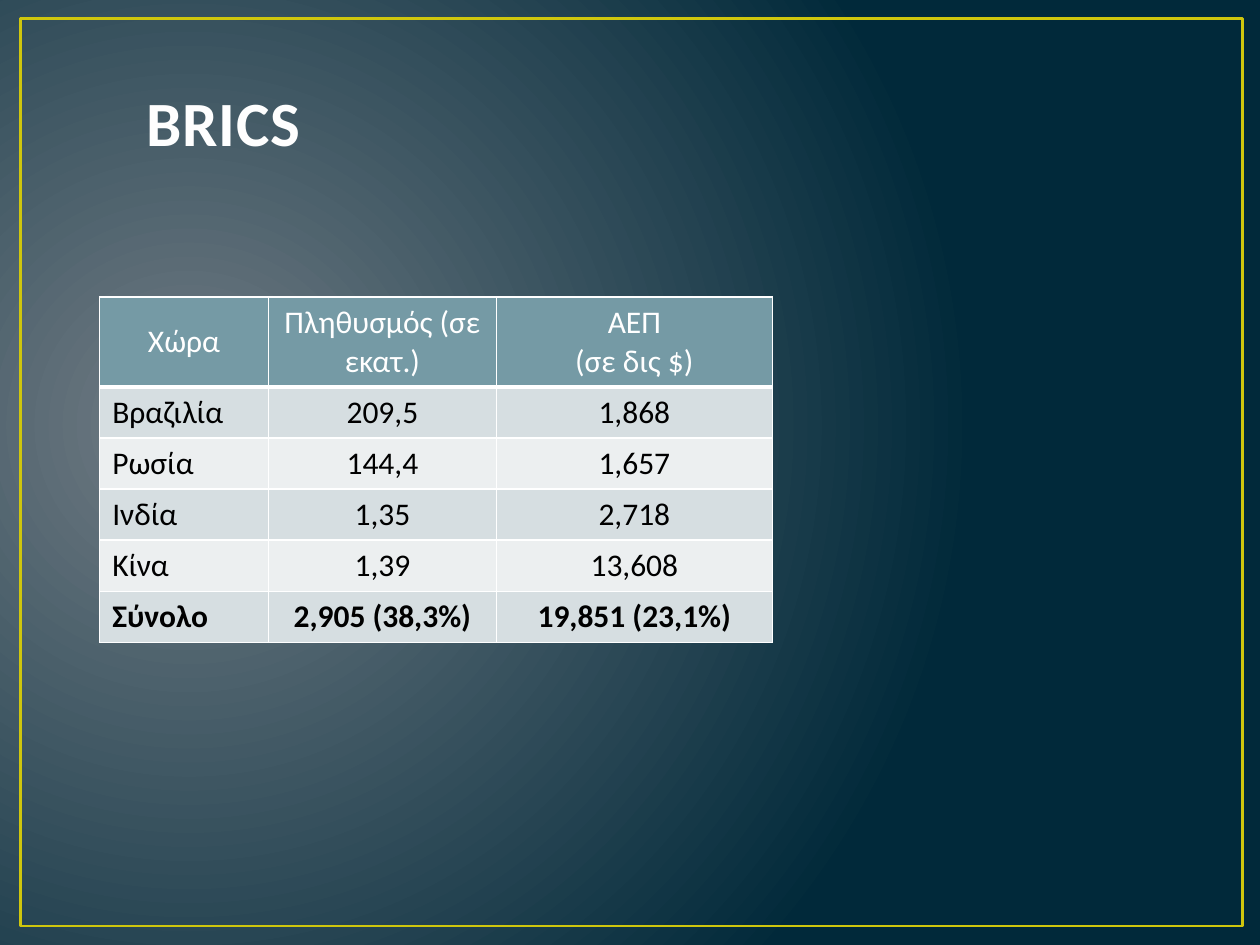
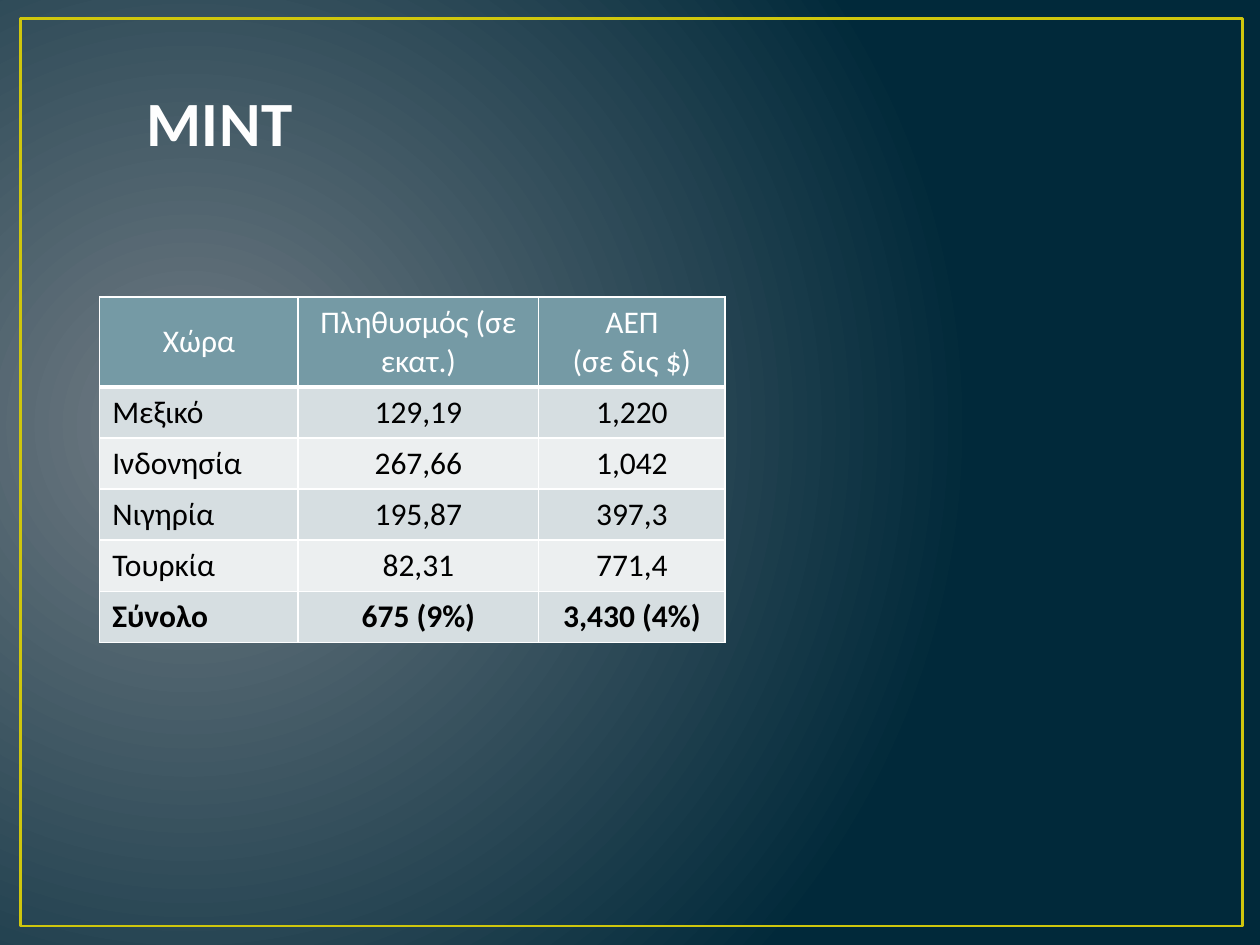
from dataclasses import dataclass

from lxml.etree import SubElement
from pptx import Presentation
from pptx.dml.color import RGBColor
from pptx.enum.shapes import MSO_SHAPE
from pptx.enum.text import MSO_ANCHOR, MSO_AUTO_SIZE, PP_ALIGN
from pptx.oxml.ns import qn
from pptx.slide import Slide, SlideMaster
from pptx.util import Cm, Pt

FONT = "Calibri"
GLOW = RGBColor(0x71, 0x7C, 0x84)
NAVY = RGBColor(0x01, 0x29, 0x3A)
GOLD = RGBColor(0xCF, 0xC6, 0x0D)
CREAM = RGBColor(0xFE, 0xFE, 0xFE)
SLATE = RGBColor(0x38, 0x4F, 0x55)
TEAL = RGBColor(0x75, 0x9A, 0xA5)
WHITE = RGBColor(0xFF, 0xFF, 0xFF)
BLACK = RGBColor(0x00, 0x00, 0x00)
BANDS = (RGBColor(0xD6, 0xDE, 0xE1), RGBColor(0xEC, 0xEF, 0xF0))

HEADER = ("Χώρα", "Πληθυσμός (σε εκατ.)", "ΑΕΠ\n(σε δις $)")
HEAD_H = Cm(1.81)
ROW_H = Cm(1.03)


@dataclass(frozen=True)
class Group:
    title: str
    widths: tuple[float, ...]
    rows: tuple[tuple[str, ...], ...]


GROUPS = (
    Group("BRICS", (3.4, 4.6, 5.56), (
        ("Βραζιλία", "209,5", "1,868"),
        ("Ρωσία", "144,4", "1,657"),
        ("Ινδία", "1,35", "2,718"),
        ("Κίνα", "1,39", "13,608"),
        ("Σύνολο", "2,905 (38,3%)", "19,851 (23,1%)"),
    )),
    Group("MINT", (4, 4.85, 3.76), (
        ("Μεξικό", "129,19", "1,220"),
        ("Ινδονησία", "267,66", "1,042"),
        ("Νιγηρία", "195,87", "397,3"),
        ("Τουρκία", "82,31", "771,4"),
        ("Σύνολο", "675 (9%)", "3,430 (4%)"),
    )),
)


def add_line(parent, tag: str, width: float, color: RGBColor):
    """Add a solid line element, such as a cell edge or a text outline."""
    line = SubElement(parent, qn(tag), w=str(Pt(width)))
    fill = SubElement(line, qn("a:solidFill"))
    SubElement(fill, qn("a:srgbClr"), val=str(color))
    return line


def set_back(master: SlideMaster) -> None:
    """Give the master a round glow at the left."""
    fill = master.background.fill
    fill.gradient()
    for stop, color in zip(fill.gradient_stops, (GLOW, NAVY)):
        stop.color.rgb = color
    grad = master.element.find(".//" + qn("a:gradFill"))
    grad.remove(grad.find(qn("a:lin")))
    glow = SubElement(grad, qn("a:path"), path="circle")
    SubElement(glow, qn("a:fillToRect"),
               l="15000", t="50000", r="85000", b="60000")


def add_frame(slide: Slide) -> None:
    """Draw the thin border behind everything else."""
    frame = slide.shapes.add_shape(
        MSO_SHAPE.RECTANGLE, Cm(0.41), Cm(0.38), Cm(24.64), Cm(18.29))
    frame.shadow.inherit = False
    frame.fill.background()
    frame.line.color.rgb = GOLD
    frame.line.width = Pt(1.5)
    slide.shapes.element.insert(2, frame.element)


def set_title(slide: Slide, text: str) -> None:
    title = slide.shapes.title
    title.left, title.top = Cm(2.69), Cm(0.05)
    title.width, title.height = Cm(20.32), Cm(3.2)
    frame = title.text_frame
    frame.auto_size = MSO_AUTO_SIZE.NONE
    frame.vertical_anchor = MSO_ANCHOR.BOTTOM
    frame.margin_bottom = Cm(0.05)
    frame.text = text
    para = frame.paragraphs[0]
    para.alignment = PP_ALIGN.LEFT
    run = para.runs[0]
    font = run.font
    font.name, font.size, font.bold = FONT, Pt(36), True
    font.color.rgb = CREAM
    props = run.font._element if hasattr(font, "_element") else run._r.rPr
    props.set("spc", "50")
    props.insert(0, add_line(props, "a:ln", 1.05, SLATE))


def set_cell(cell, text: str, row: int, col: int, last: int) -> None:
    head = row == 0
    cell.text = text
    cell.vertical_anchor = MSO_ANCHOR.MIDDLE if head else MSO_ANCHOR.TOP
    for para in cell.text_frame.paragraphs:
        para.alignment = PP_ALIGN.CENTER if head or col else PP_ALIGN.LEFT
        font = para.font
        font.name, font.size, font.bold = FONT, Pt(18), row == last
        font.color.rgb = WHITE if head else BLACK
    props = cell._tc.get_or_add_tcPr()
    for side in "LRTB" if head else "LRB":
        add_line(props, f"a:ln{side}", 3 if head and side == "B" else 1, WHITE)
    cell.fill.solid()
    cell.fill.fore_color.rgb = TEAL if head else BANDS[(row - 1) % 2]


def add_grid(slide: Slide, group: Group) -> None:
    rows = (HEADER, *group.rows)
    last = len(rows) - 1
    table = slide.shapes.add_table(
        len(rows), len(HEADER), Cm(2.01), Cm(5.99),
        Cm(sum(group.widths)), HEAD_H + last * ROW_H).table
    for col, width in zip(table.columns, group.widths):
        col.width = Cm(width)
    for i, texts in enumerate(rows):
        table.rows[i].height = ROW_H if i else HEAD_H
        for j, text in enumerate(texts):
            set_cell(table.cell(i, j), text, i, j, last)


def main() -> None:
    deck = Presentation()
    deck.slide_width, deck.slide_height = Cm(25.4), Cm(19.05)
    set_back(deck.slide_master)
    for group in GROUPS:
        slide = deck.slides.add_slide(deck.slide_layouts[5])
        add_frame(slide)
        set_title(slide, group.title)
        add_grid(slide, group)
    deck.save("out.pptx")


if __name__ == "__main__":
    main()
